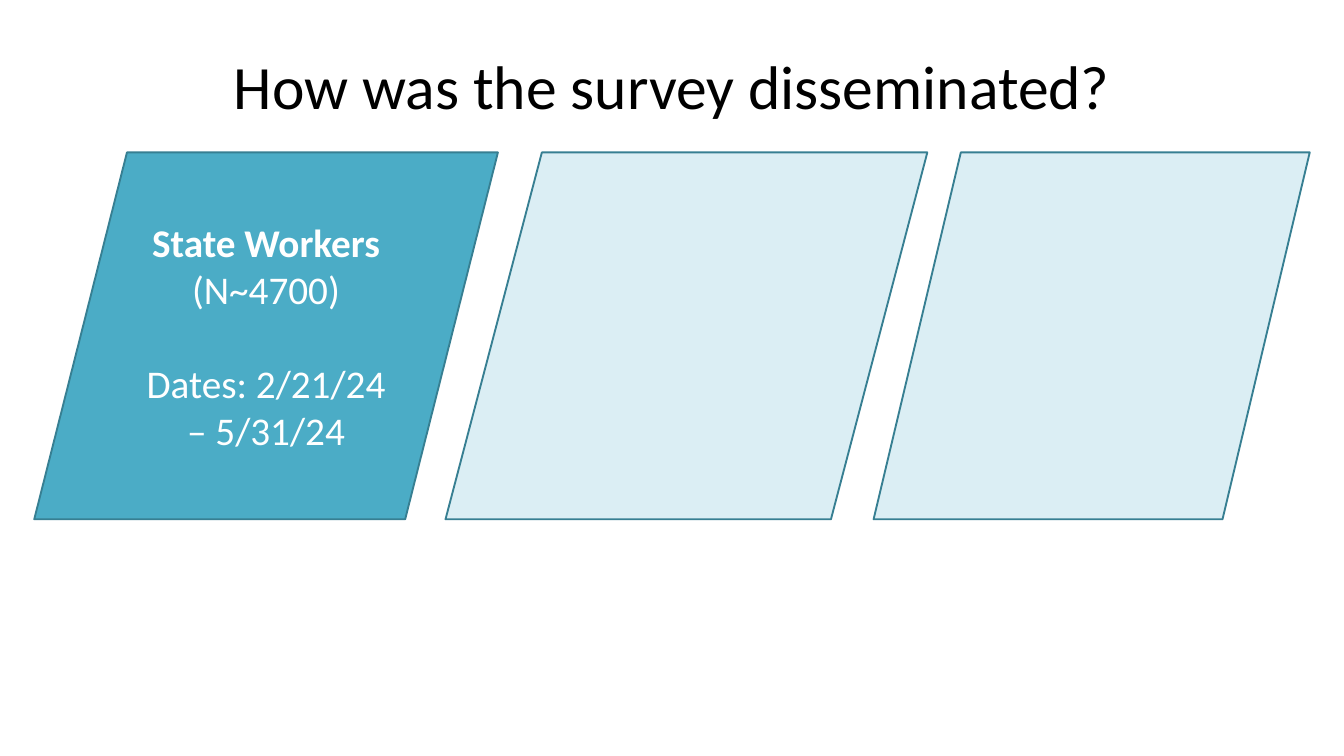
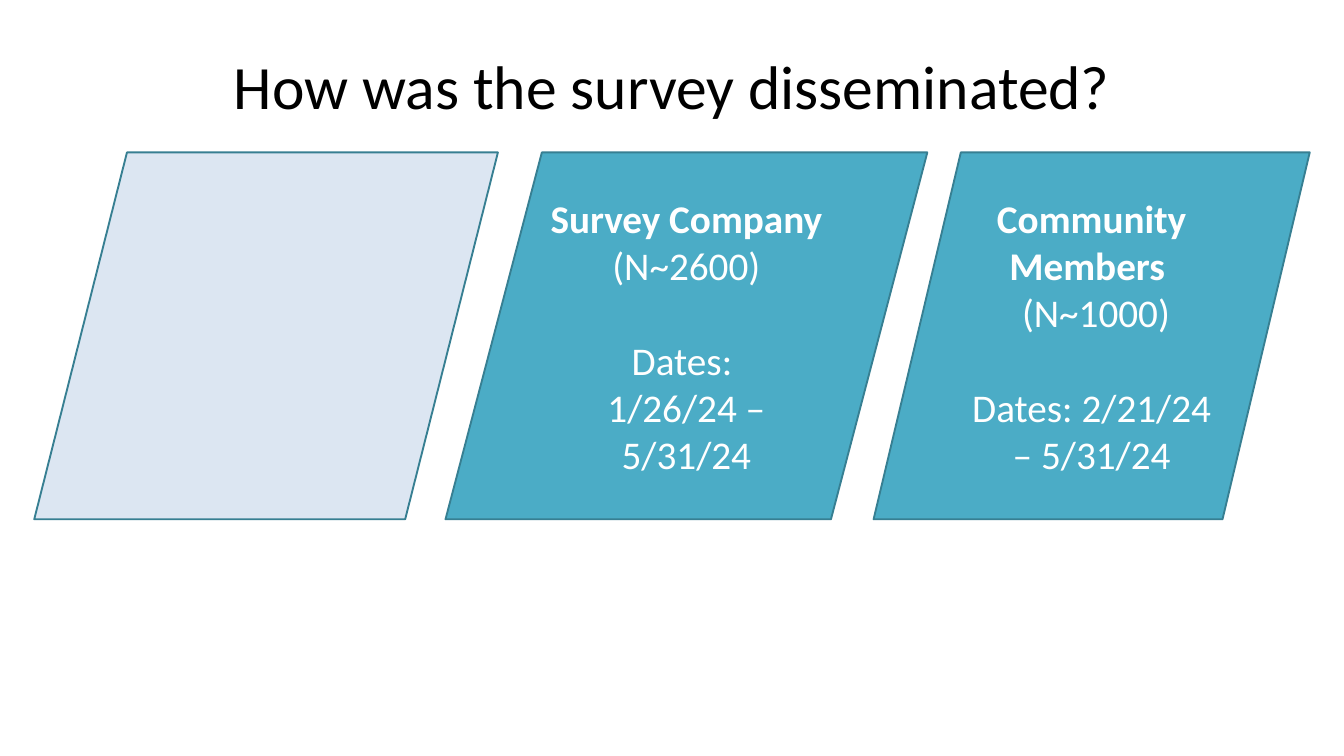
from dataclasses import dataclass

from pptx import Presentation
from pptx.dml.color import RGBColor
from pptx.enum.shapes import MSO_SHAPE
from pptx.enum.text import MSO_ANCHOR, PP_ALIGN
from pptx.util import Inches, Pt

SLANT = MSO_SHAPE.FLOWCHART_DATA
MIDDLE = MSO_ANCHOR.MIDDLE
CENTER = PP_ALIGN.CENTER
WIDE, HIGH = Inches(20), Inches(11.25)


@dataclass(frozen=True)
class Theme:
    font: str = "Calibri"
    black: str = "000000"
    white: str = "FFFFFF"
    teal: str = "4BACC6"
    edge: str = "377F92"
    mist: str = "DBEEF4"
    haze: str = "DCE6F2"
    title: int = 66
    body: int = 42
    gap: int = 51  # one body line


@dataclass(frozen=True)
class Group:
    left: float
    width: float
    lines: tuple  # paragraphs of (text, bold) runs
    dates: int  # paragraph that opens the dates


THEME = Theme()
TITLE = "How was the survey disseminated?"
SPAN = "Dates: 2/21/24 – 5/31/24"

# Left and width are percent of the slide's width
STATE = Group(2.55, 34.5, (
    [("State Workers", True)], [("(N~4700)", False)], [(SPAN, False)]), 2)
FIRM = Group(33.15, 35.85, (
    [("Survey Company ", True), ("(N~2600)", False)],
    [("Dates: ", False)], [("1/26/24 – 5/31/24", False)]), 1)
LOCAL = Group(65, 32.45, (
    [("Community Members ", True)], [(" (N~1000)", False)],
    [(SPAN, False)]), 2)


def color(code):
    return RGBColor.from_string(code)


def place(left, top, width, height):
    """Turn percent of the slide into lengths."""
    return (int(WIDE * left / 100), int(HIGH * top / 100),
            int(WIDE * width / 100), int(HIGH * height / 100))


def style(para, size, ink):
    para.alignment = CENTER
    para.font.name = THEME.font
    para.font.size = Pt(size)
    para.font.color.rgb = color(ink)


def add_title(slide):
    frame = slide.shapes.add_textbox(*place(9.5, 2, 81, 19.8)).text_frame
    frame.word_wrap = True
    frame.vertical_anchor = MIDDLE
    frame.margin_left = frame.margin_right = Inches(0.15)
    frame.margin_top = frame.margin_bottom = Inches(0.07)
    para = frame.paragraphs[0]
    para.text = TITLE
    para.line_spacing = 0.9
    style(para, THEME.title, THEME.black)


def add_slant(slide, group, fill):
    shape = slide.shapes.add_shape(
        SLANT, *place(group.left, 20.16, group.width, 48.53))
    shape.shadow.inherit = False
    shape.fill.solid()
    shape.fill.fore_color.rgb = color(fill)
    shape.line.color.rgb = color(THEME.edge)
    shape.line.width = Pt(2)
    return shape


def add_lines(shape, group):
    frame = shape.text_frame
    frame.word_wrap = True
    frame.vertical_anchor = MIDDLE
    for row, runs in enumerate(group.lines):
        para = frame.add_paragraph() if row else frame.paragraphs[0]
        style(para, THEME.body, THEME.white)
        if row == group.dates:
            para.space_before = Pt(THEME.gap)
        for text, bold in runs:
            run = para.add_run()
            run.text = text
            run.font.bold = bold


def add_slide(deck, fills):
    slide = deck.slides.add_slide(deck.slide_layouts[6])
    for group, fill in zip((STATE, FIRM, LOCAL), fills):
        shape = add_slant(slide, group, fill)
        # Only groups in focus carry words
        if fill == THEME.teal:
            add_lines(shape, group)
    add_title(slide)


def main():
    deck = Presentation()
    deck.slide_width, deck.slide_height = WIDE, HIGH
    # State workers in focus
    add_slide(deck, (THEME.teal, THEME.mist, THEME.mist))
    # Survey company and community in focus
    add_slide(deck, (THEME.haze, THEME.teal, THEME.teal))
    deck.save("out.pptx")


if __name__ == "__main__":
    main()
